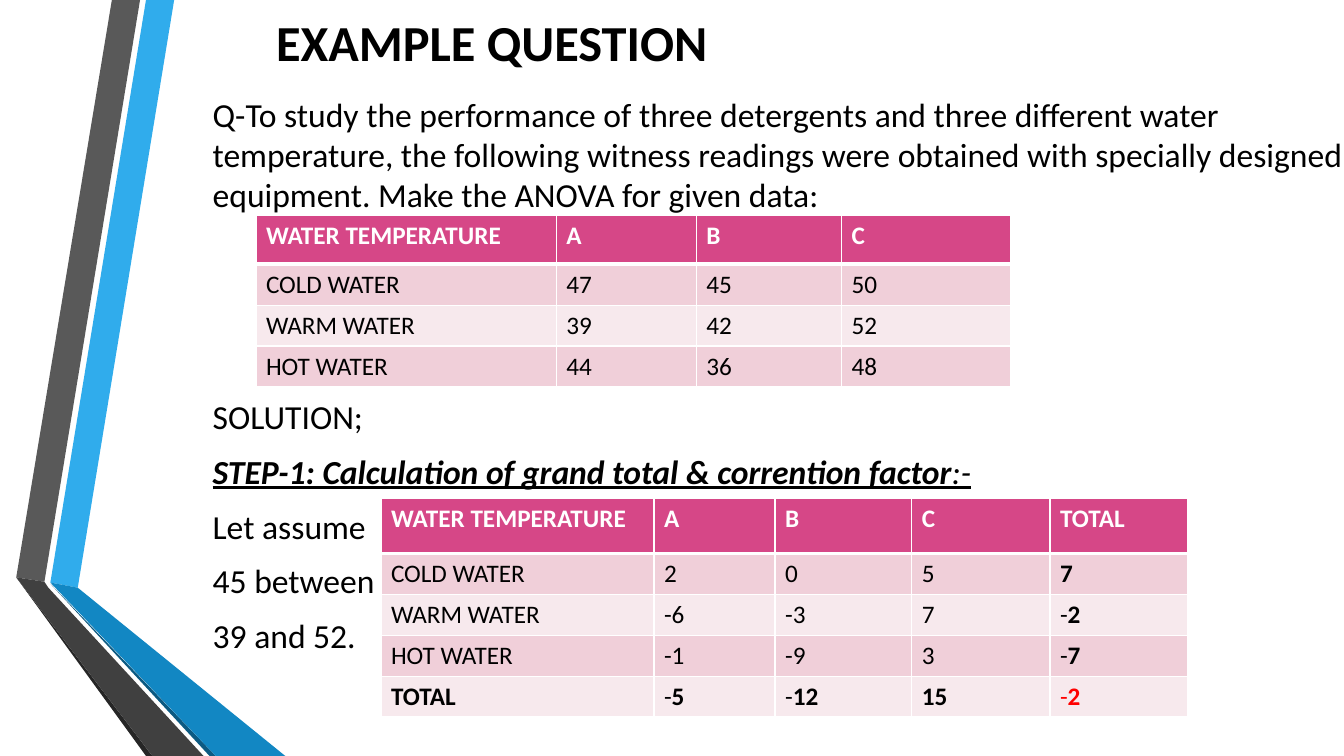
from dataclasses import dataclass
from lxml.etree import SubElement
from pptx import Presentation
from pptx.dml.color import RGBColor as Rgb
from pptx.enum.text import MSO_ANCHOR as Anchor, PP_ALIGN as Align
from pptx.oxml.ns import qn
from pptx.util import Cm, Pt


@dataclass(frozen=True)
class Theme:
    font: str = "Calibri"
    black: str = "000000"
    white: str = "FFFFFF"
    red: str = "FF0000"
    header: str = "D64787"
    bands: tuple = ("F0CFD9", "F7E9ED")
    title_size: int = 36
    body_size: int = 24
    table_size: int = 18


THEME = Theme()
TITLE = "EXAMPLE QUESTION"
QUESTION = (
    "Q-To study the performance of three detergents and three different water "
    "temperature, the following witness readings were obtained with specially "
    "designed equipment. Make the ANOVA for given data:"
)
STEP = "STEP-1: Calculation of grand total & corrention factor"
EMPHASIS = {"italic": True, "underline": True}
SOLUTION = [
    [("SOLUTION;", {})],
    [(STEP, {"bold": True, **EMPHASIS}), (":-", EMPHASIS)],
    [("Let assume", {})],
    [("45 between", {})],
    [("39 and 52.", {})],
]
READINGS = [
    ("WATER TEMPERATURE", "A", "B", "C"),
    ("COLD WATER", "47", "45", "50"),
    ("WARM WATER", "39", "42", "52"),
    ("HOT WATER", "44", "36", "48"),
]
DEVIATIONS = [
    ("WATER TEMPERATURE", "A", "B", "C", "TOTAL"),
    ("COLD WATER", "2", "0", "5", "7"),
    ("WARM WATER", "-6", "-3", "7", "-2"),
    ("HOT WATER", "-1", "-9", "3", "-7"),
    ("TOTAL", "-5", "-12", "15", "-2"),
]
TABLES = [
    (READINGS, 6.45, 5.44, (7.57, 3.53, 3.66, 4.26), 1.22),
    (DEVIATIONS, 9.6, 12.55, (6.88, 3.05, 3.45, 3.48, 3.48), 1.4),
]
ROW_HEIGHT = 1.03
RIBBONS = [
    ("30ACEC", [(1.27, 14.68), (1.96, 14.81), (4.39, 0), (3.68, 0)]),
    ("595959", [(3.53, 0), (2.82, 0), (0.41, 14.55), (1.12, 14.66)]),
    ("262626", [(0.41, 14.55), (3.68, 19.05), (3.84, 19.05)]),
    ("0C5A82", [(1.27, 14.71), (5.28, 19.05), (5.44, 19.05)]),
    ("1287C3", [(1.27, 14.68), (5.44, 19.05), (7.19, 19.05), (1.96, 14.81)]),
    ("404040", [(5.13, 19.05), (1.22, 14.81), (1.12, 14.66), (0.41, 14.55), (3.84, 19.05)]),
]


def add_run(paragraph, text, size, color=THEME.black, bold=False, italic=False, underline=False):
    run = paragraph.add_run()
    run.text = text
    font = run.font
    font.name, font.size, font.color.rgb = THEME.font, Pt(size), Rgb.from_string(color)
    font.bold, font.italic, font.underline = bold, italic, underline


def add_ribbon(slide, color, points):
    corners = [(Cm(x), Cm(y)) for x, y in points]
    builder = slide.shapes.build_freeform(*corners[0])
    builder.add_line_segments(corners[1:], close=True)
    shape = builder.convert_to_shape()
    shape.shadow.inherit = False
    shape.fill.solid()
    shape.fill.fore_color.rgb = Rgb.from_string(color)
    shape.line.fill.background()


def add_text(slide, box, paragraphs, size, anchor=Anchor.TOP, align=Align.LEFT):
    frame = slide.shapes.add_textbox(*map(Cm, box)).text_frame
    frame.word_wrap = True
    frame.vertical_anchor = anchor
    frame.margin_left = frame.margin_right = frame.margin_top = frame.margin_bottom = 0
    for index, runs in enumerate(paragraphs):
        paragraph = frame.add_paragraph() if index else frame.paragraphs[0]
        paragraph.alignment = align
        paragraph.space_after = Pt(10.3)
        for text, style in runs:
            add_run(paragraph, text, size, **style)


def add_borders(cell, widths):
    properties = cell._tc.get_or_add_tcPr()
    for position, (side, width) in enumerate(widths.items()):
        line = SubElement(properties, qn(f"a:{side}"), w=str(Pt(width)))
        fill = SubElement(line, qn("a:solidFill"))
        SubElement(fill, qn("a:srgbClr"), val=THEME.white)
        properties.insert(position, line)


def fill_cell(cell, text, row, is_total, is_grand_total):
    is_header = row == 0
    cell.fill.solid()
    cell.fill.fore_color.rgb = Rgb.from_string(THEME.header if is_header else THEME.bands[(row - 1) % 2])
    add_borders(cell, {"lnL": 1, "lnR": 1, "lnT": 3 if row == 1 else 1, "lnB": 3 if is_header else 1})
    color = THEME.white if is_header else THEME.red if is_grand_total else THEME.black
    paragraph = cell.text_frame.paragraphs[0]
    if is_total and text.startswith("-"):
        add_run(paragraph, "-", THEME.table_size, color)
        text = text[1:]
    add_run(paragraph, text, THEME.table_size, color, bold=is_header or is_total)


def add_data_table(slide, rows, left, top, widths, header_height):
    heights = [header_height] + [ROW_HEIGHT] * (len(rows) - 1)
    box = map(Cm, (left, top, sum(widths), sum(heights)))
    table = slide.shapes.add_table(len(rows), len(widths), *box).table
    for column, width in zip(table.columns, widths):
        column.width = Cm(width)
    for table_row, height in zip(table.rows, heights):
        table_row.height = Cm(height)
    for row, values in enumerate(rows):
        for column, text in enumerate(values):
            in_total_row = values[0] == "TOTAL"
            in_total_column = rows[0][column] == "TOTAL"
            fill_cell(table.cell(row, column), text, row,
                      in_total_row or in_total_column, in_total_row and in_total_column)


def main():
    presentation = Presentation()
    presentation.slide_width, presentation.slide_height = Cm(33.87), Cm(19.05)
    slide = presentation.slides.add_slide(presentation.slide_layouts[6])
    for color, points in RIBBONS:
        add_ribbon(slide, color, points)
    add_text(slide, (5.51, 0.3, 13.77, 1.47), [[(TITLE, {"bold": True})]],
             THEME.title_size, Anchor.MIDDLE, Align.CENTER)
    add_text(slide, (5.36, 2.36, 28.5, 3.1), [[(QUESTION, {})]], THEME.body_size)
    add_text(slide, (5.36, 9.98, 22, 7), SOLUTION, THEME.body_size)
    for table in TABLES:
        add_data_table(slide, *table)
    presentation.save("out.pptx")


if __name__ == "__main__":
    main()
